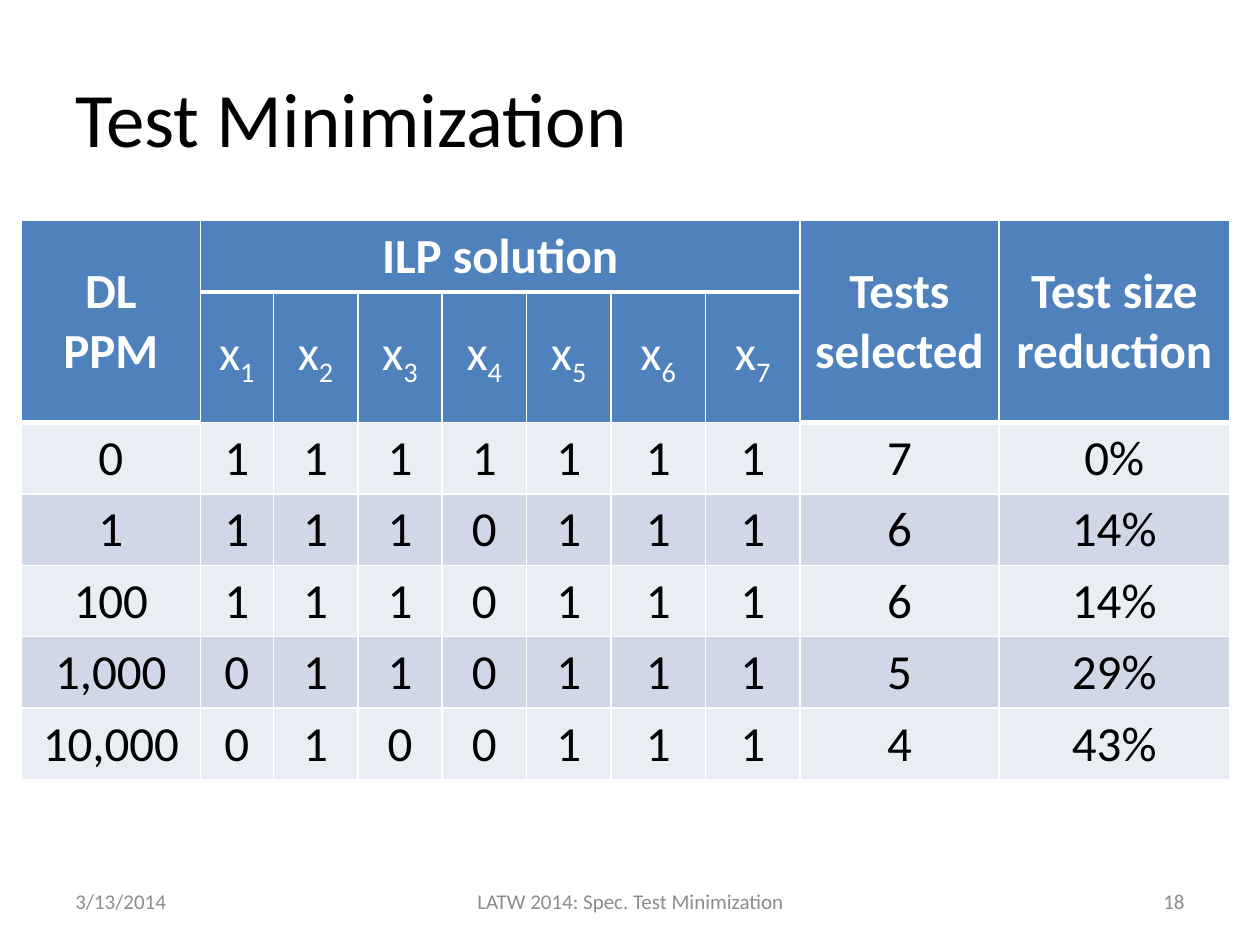
from dataclasses import dataclass

from lxml import etree
from pptx import Presentation, slide as sl, table as tb
from pptx.dml.color import RGBColor
from pptx.enum import text
from pptx.oxml import ns
from pptx.text import text as tx
from pptx.util import Inches, Pt

WHITE = RGBColor(0xFF, 0xFF, 0xFF)
BLACK = RGBColor(0x00, 0x00, 0x00)
GRAY = RGBColor(0x8C, 0x8C, 0x8C)
HEADER_BLUE = RGBColor(0x4F, 0x81, 0xBD)
BANDS = (RGBColor(0xE9, 0xED, 0xF4), RGBColor(0xD0, 0xD8, 0xE8))

LEFT, CENTER, RIGHT = (
    text.PP_ALIGN.LEFT,
    text.PP_ALIGN.CENTER,
    text.PP_ALIGN.RIGHT,
)
SUBSCRIPT = "-25000"
THIN, THICK = Pt(1), Pt(3)


@dataclass(frozen=True)
class Label:
    words: str
    left: float
    top: float
    width: float
    height: float
    size: int
    color: RGBColor
    align: text.PP_ALIGN


@dataclass(frozen=True)
class Result:
    defect_level: str
    solution: str
    reduction: str

    def values(self) -> list[str]:
        selected = str(self.solution.count("1"))
        return [self.defect_level, *self.solution, selected, self.reduction]


LABELS = (
    Label("Test Minimization", 0.5, 0.3, 9, 1.25, 44, BLACK, LEFT),
    Label("3/13/2014", 0.5, 6.95, 2.33, 0.4, 12, GRAY, LEFT),
    Label("LATW 2014: Spec. Test Minimization", 3.42, 6.95, 3.17, 0.4, 12, GRAY, CENTER),
    Label("18", 7.17, 6.95, 2.33, 0.4, 12, GRAY, RIGHT),
)
RESULTS = (
    Result("0", "1111111", "0%"),
    Result("1", "1110111", "14%"),
    Result("100", "1110111", "14%"),
    Result("1,000", "0110111", "29%"),
    Result("10,000", "0100111", "43%"),
)
COLUMN_WIDTHS = (1.42, 0.58, 0.67, 0.67, 0.67, 0.67, 0.75, 0.75, 1.58, 1.83)
ROW_HEIGHT = 0.41
HEADER_ROWS = 2
TEST_COUNT = 7
TALL_HEADERS = {0: "DL\nPPM", 8: "Tests selected", 9: "Test size reduction"}


def add_span(para: tx._Paragraph, words: str, size: int, color: RGBColor, bold: bool) -> tx._Run:
    span = para.add_run()
    span.text = words
    formats = {"name": "Calibri", "size": Pt(size), "bold": bold}
    for name, value in formats.items():
        setattr(span.font, name, value)
    span.font.color.rgb = color
    return span


def add_label(page: sl.Slide, label: Label) -> None:
    places = (label.left, label.top, label.width, label.height)
    box = page.shapes.add_textbox(*map(Inches, places))
    formats = {"word_wrap": True, "vertical_anchor": text.MSO_ANCHOR.MIDDLE}
    for name, value in formats.items():
        setattr(box.text_frame, name, value)
    para = box.text_frame.paragraphs[0]
    para.alignment = label.align
    add_span(para, label.words, label.size, label.color, False)


def style_cell(cell: tb._Cell, fill: RGBColor, bottom: int) -> None:
    cell.vertical_anchor = text.MSO_ANCHOR.MIDDLE
    properties = cell._tc.get_or_add_tcPr()
    borders = {"a:lnL": THIN, "a:lnR": THIN, "a:lnT": THIN, "a:lnB": bottom}
    for tag, width in borders.items():
        line = etree.SubElement(properties, ns.qn(tag), w=str(int(width)))
        solid = etree.SubElement(line, ns.qn("a:solidFill"))
        etree.SubElement(solid, ns.qn("a:srgbClr"), val=str(WHITE))
    cell.fill.solid()
    cell.fill.fore_color.rgb = fill


def write_cell(cell: tb._Cell, words: str, color: RGBColor, bold: bool = False) -> tx._Paragraph:
    frame = cell.text_frame
    for index, line in enumerate(words.split("\n")):
        para = frame.add_paragraph() if index else frame.paragraphs[0]
        para.alignment = CENTER
        add_span(para, line, 28, color, bold)
    return para


def write_headers(grid: tb.Table) -> None:
    for column, words in TALL_HEADERS.items():
        write_cell(grid.cell(0, column), words, WHITE, True)
        grid.cell(0, column).merge(grid.cell(1, column))
    write_cell(grid.cell(0, 1), "ILP solution", WHITE, True)
    grid.cell(0, 1).merge(grid.cell(0, TEST_COUNT))
    for number in range(1, TEST_COUNT + 1):
        para = write_cell(grid.cell(1, number), "x", WHITE)
        index = add_span(para, str(number), 28, WHITE, False)
        index._r.get_or_add_rPr().set("baseline", SUBSCRIPT)


def add_results_table(page: sl.Slide) -> None:
    row_count = HEADER_ROWS + len(RESULTS)
    places = map(Inches, (0.17, 1.75, 9.58, 3.97))
    holder = page.shapes.add_table(row_count, len(COLUMN_WIDTHS), *places)
    grid = holder.table
    for name, value in {"first_row": False, "horz_banding": False}.items():
        setattr(grid, name, value)
    for column, width in zip(grid.columns, COLUMN_WIDTHS):
        column.width = Inches(width)
    for row_index, row in enumerate(grid.rows):
        row.height = Inches(ROW_HEIGHT)
        is_header = row_index < HEADER_ROWS
        fill = HEADER_BLUE if is_header else BANDS[row_index % 2]
        for column_index, cell in enumerate(row.cells):
            closes_header = row_index == 1 and column_index in TALL_HEADERS
            style_cell(cell, fill, THICK if row_index == 0 or closes_header else THIN)
    holder.height = Inches(3.97)
    write_headers(grid)
    for row_index, result in enumerate(RESULTS, HEADER_ROWS):
        for column_index, value in enumerate(result.values()):
            write_cell(grid.cell(row_index, column_index), value, BLACK)


def main() -> None:
    deck = Presentation()
    deck.slide_width, deck.slide_height = Inches(10), Inches(7.5)
    page = deck.slides.add_slide(deck.slide_layouts[6])
    for label in LABELS:
        add_label(page, label)
    add_results_table(page)
    deck.save("out.pptx")


if __name__ == "__main__":
    main()
